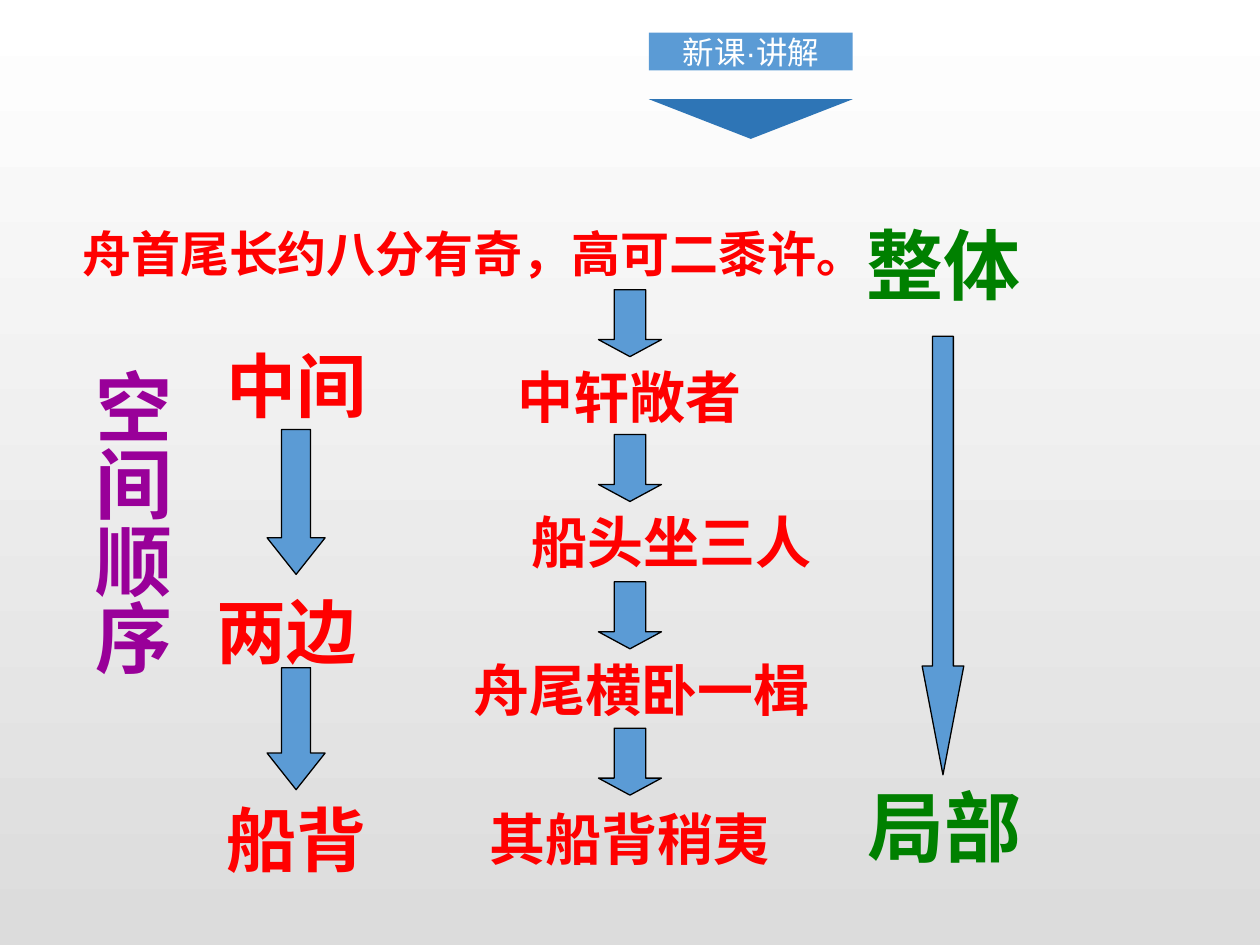
from lxml import etree
from pptx import Presentation
from pptx import util as u
from pptx.dml.color import RGBColor
from pptx.enum import shapes, text
from pptx.oxml.ns import qn

RED, GREEN, PURPLE = "FF0000", "008000", "990099"
BLUE, DARK_BLUE = "5B9BD5", "2E75B6"

# wording, centre x, top, width (cm), size (pt), colour
LABELS = [
    ("舟首尾长约八分有奇，高可二黍许。", 9.55, 4.39, 19, 28, RED),
    ("中轩敞者", 12.69, 7.19, 7.19, 32, RED),
    ("船头坐三人", 13.54, 10.11, 16.31, 32, RED),
    ("舟尾横卧一楫", 12.94, 13.08, 9.73, 32, RED),
    ("其船背稍夷", 12.69, 16.1, 7.19, 32, RED),
    ("整体", 19.02, 4.27, 4.78, 44, GREEN),
    ("局部", 19.05, 15.6, 3.71, 44, GREEN),
    ("中间", 5.97, 6.78, 4.11, 40, RED),
    ("两边", 5.77, 11.73, 4.11, 40, RED),
    ("船背", 5.97, 15.93, 4.11, 40, RED),
]
# centre x, top, width, height (cm), head length / width
ARROWS = [(12.7, top, 1.27, 1.35, 0.27) for top in (5.84, 8.76, 11.73, 14.68)]
ARROWS += [
    (5.97, 8.66, 1.17, 2.92, 0.63),
    (5.97, 13.46, 1.17, 2.46, 0.63),
    (19.01, 6.78, 0.84, 8.84, 2.61),
]


def rgb(value):
    return RGBColor.from_string(value)


def cm(*values):
    return [u.Cm(v) for v in values]


def write(tf, words, size, font, color, bold):
    p = tf.paragraphs[0]
    p.alignment = text.PP_ALIGN.CENTER
    r = p.add_run()
    r.text = words
    r.font.size, r.font.name, r.font.bold = u.Pt(size), font, bold
    r.font.color.rgb = rgb(color)
    ea = etree.Element(qn("a:ea"), typeface=font)
    r.font._element.find(qn("a:latin")).addnext(ea)


def add_label(words, left, top, width, height, size, color):
    tf = s.shapes.add_textbox(*cm(left, top, width, height)).text_frame
    tf.word_wrap = True
    write(tf, words, size, "Cabin", color, True)
    return tf


def add_filled(parent, kind, box, color, line=None):
    sp = parent.add_shape(kind, *cm(*box))
    sp.shadow.inherit = False
    sp.fill.solid()
    sp.fill.fore_color.rgb = rgb(color)
    if line:
        sp.line.color.rgb = rgb(line)
        sp.line.width = u.Pt(0.75)
    else:
        sp.line.fill.background()
    return sp


prs = Presentation()
prs.slide_width, prs.slide_height = cm(25.4, 19.05)
s = prs.slides.add_slide(prs.slide_layouts[6])

fill = s.background.fill
fill.gradient()
fill.gradient_angle = 270
for stop, color in zip(fill.gradient_stops, ("FFFFFF", "DCDCDC")):
    stop.color.rgb = rgb(color)

for words, center, top, width, size, color in LABELS:
    height = size * 1.2 / 72 * 2.54 + 0.25  # one line plus insets
    add_label(words, center - width / 2, top, width, height, size, color)

order = add_label("空间顺序", 1.32, 7.19, 2.39, 8, 44, PURPLE)
order._txBody.bodyPr.set("vert", "eaVert")

for center, top, width, height, head in ARROWS:
    box = (center - width / 2, top, width, height)
    sp = add_filled(s.shapes, shapes.MSO_SHAPE.DOWN_ARROW, box, BLUE, "000000")
    sp.adjustments[0], sp.adjustments[1] = 0.5, head

header = s.shapes.add_group_shape().shapes
banner = add_filled(header, shapes.MSO_SHAPE.RECTANGLE, (13.08, 0.66, 4.11, 0.76), BLUE)
tf = banner.text_frame
tf.margin_left = tf.margin_right = tf.margin_top = tf.margin_bottom = 0
tf.vertical_anchor = text.MSO_ANCHOR.MIDDLE
write(tf, "新课·讲解", 18, "Arial", "FFFFFF", False)
pointer = add_filled(header, shapes.MSO_SHAPE.ISOSCELES_TRIANGLE,
                     (13.08, 2, 4.11, 0.8), DARK_BLUE)
pointer.rotation = 180

prs.save("out.pptx")
